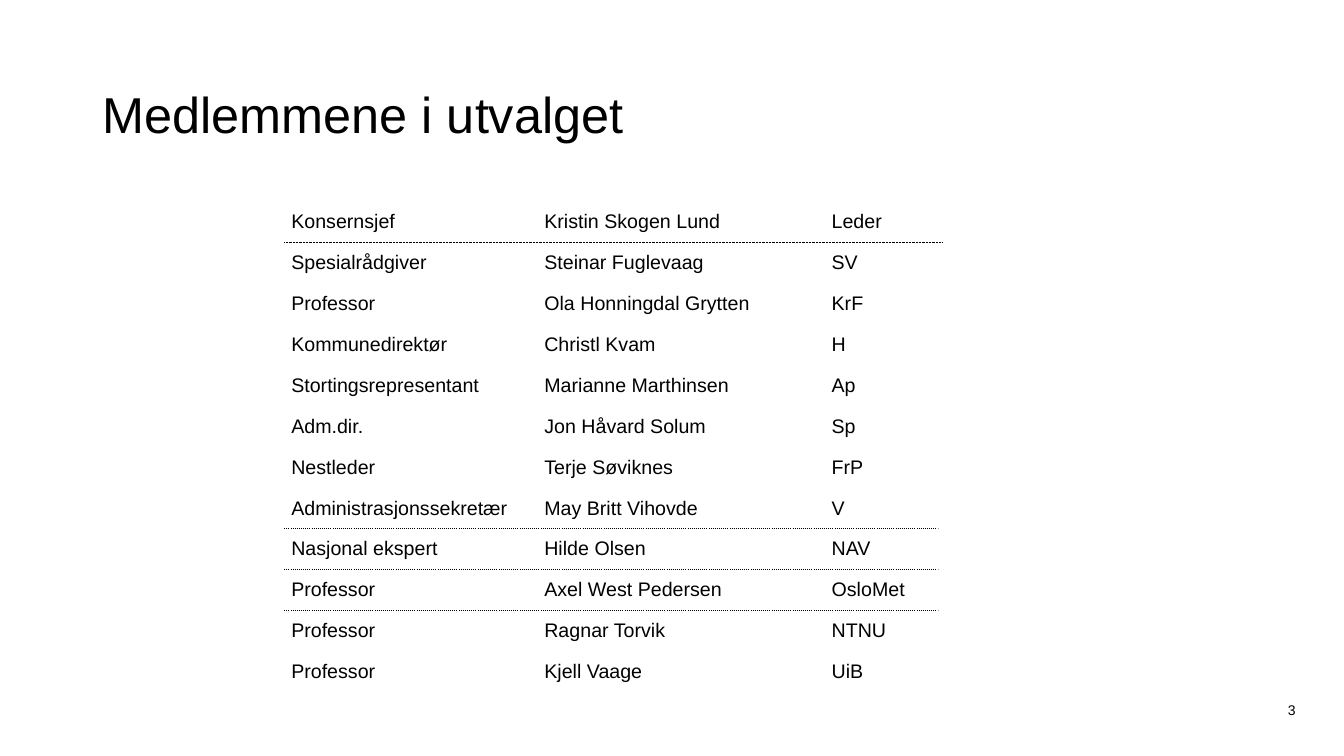
import dataclasses
import lxml.etree
import pptx
import pptx.util
import pptx.dml.color
import pptx.enum.dml
import pptx.enum.shapes
import pptx.enum.text
import pptx.oxml.ns

Align = pptx.enum.text.PP_ALIGN
Anchor = pptx.enum.text.MSO_ANCHOR
qn = pptx.oxml.ns.qn


@dataclasses.dataclass
class Theme:
    font: str = "Arial"
    ink: str = "000000"
    title: int = 36
    body: int = 14
    small: int = 10
    rule: float = 0.5
    edge: float = 1
    grid: int = 100
    plain: str = "{2D5ABB26-0587-4C30-8999-92F81FD0307C}"


class Page:
    def __init__(self, deck, theme):
        self.deck = deck
        self.theme = theme
        self.slide = deck.slides.add_slide(deck.slide_layouts[6])
        self.shapes = self.slide.shapes

    def col(self, n):
        return round(self.deck.slide_width * n / self.theme.grid)

    def row(self, n):
        return round(self.deck.slide_height * n / self.theme.grid)

    def label(self, frame, text, size, align=Align.LEFT):
        frame.text = text
        para = frame.paragraphs[0]
        para.alignment = align
        font = para.runs[0].font
        font.name = self.theme.font
        font.size = pptx.util.Pt(size)
        font.color.rgb = pptx.dml.color.RGBColor.from_string(self.theme.ink)

    def text(self, text, left, top, wide, high, size,
             align=Align.LEFT, anchor=Anchor.TOP, inset=0.1):
        box = self.shapes.add_textbox(
            self.col(left), self.row(top), self.col(wide), self.row(high))
        frame = box.text_frame
        frame.word_wrap = True
        frame.vertical_anchor = anchor
        frame.margin_right = pptx.util.Inches(inset)
        self.label(frame, text, size, align)

    def edge(self, cell, side):
        line = lxml.etree.Element(qn("a:" + side))
        line.set("w", str(pptx.util.Pt(self.theme.edge)))
        fill = lxml.etree.SubElement(line, qn("a:solidFill"))
        lxml.etree.SubElement(fill, qn("a:srgbClr")).set("val", self.theme.ink)
        lxml.etree.SubElement(line, qn("a:prstDash")).set("val", "sysDot")
        cell._tc.get_or_add_tcPr().insert(0, line)

    def table(self, data, left, top, wides, high, ruled):
        frame = self.shapes.add_table(
            len(data), len(wides), self.col(left), self.row(top),
            self.col(sum(wides)), self.row(high * len(data)))
        table = frame.table
        table.first_row = table.horz_banding = False
        table._tbl.tblPr.find(qn("a:tableStyleId")).text = self.theme.plain
        for column, wide in zip(table.columns, wides):
            column.width = self.col(wide)
        for i, texts in enumerate(data):
            table.rows[i].height = self.row(high)
            for j, text in enumerate(texts):
                cell = table.cell(i, j)
                cell.fill.background()
                cell.vertical_anchor = Anchor.MIDDLE
                cell.margin_left = cell.margin_right = pptx.util.Inches(0.07)
                cell.margin_top = cell.margin_bottom = 0
                self.label(cell.text_frame, text, self.theme.body)
                if i in ruled:
                    self.edge(cell, "lnB")
                if i - 1 in ruled:
                    self.edge(cell, "lnT")

    def rule(self, left, right, top):
        line = self.shapes.add_connector(
            pptx.enum.shapes.MSO_CONNECTOR.STRAIGHT,
            self.col(left), self.row(top), self.col(right), self.row(top))
        line.line.color.rgb = pptx.dml.color.RGBColor.from_string(self.theme.ink)
        line.line.width = pptx.util.Pt(self.theme.rule)
        line.line.dash_style = pptx.enum.dml.MSO_LINE.ROUND_DOT
        lxml.etree.SubElement(line._element.spPr, qn("a:effectLst"))


MEMBERS = [
    ("Konsernsjef", "Kristin Skogen Lund", "Leder"),
    ("Spesialrådgiver", "Steinar Fuglevaag", "SV"),
    ("Professor", "Ola Honningdal Grytten", "KrF"),
    ("Kommunedirektør", "Christl Kvam", "H"),
    ("Stortingsrepresentant", "Marianne Marthinsen", "Ap"),
    ("Adm.dir.", "Jon Håvard Solum", "Sp"),
    ("Nestleder", "Terje Søviknes", "FrP"),
    ("Administrasjonssekretær", "May Britt Vihovde", "V"),
    ("Nasjonal ekspert", "Hilde Olsen", "NAV"),
    ("Professor", "Axel West Pedersen", "OsloMet"),
    ("Professor", "Ragnar Torvik", "NTNU"),
    ("Professor", "Kjell Vaage", "UiB"),
]


def main():
    deck = pptx.Presentation()
    deck.slide_width = pptx.util.Inches(13.33)
    deck.slide_height = pptx.util.Inches(7.5)
    theme = Theme()
    page = Page(deck, theme)
    left = 21.15
    page.text("Medlemmene i utvalget", 6.9, 5.33, 73.82, 19.33,
              theme.title, anchor=Anchor.MIDDLE)
    page.table(MEMBERS, left, 26.67, (18.83, 21.38, 8.4), 5.41, (7, 8))
    page.text("3", 92.27, 92.13, 4.13, 3.2, theme.small, Align.RIGHT, inset=0)
    page.rule(left, 70.14, 32)
    deck.save("out.pptx")


if __name__ == "__main__":
    main()
